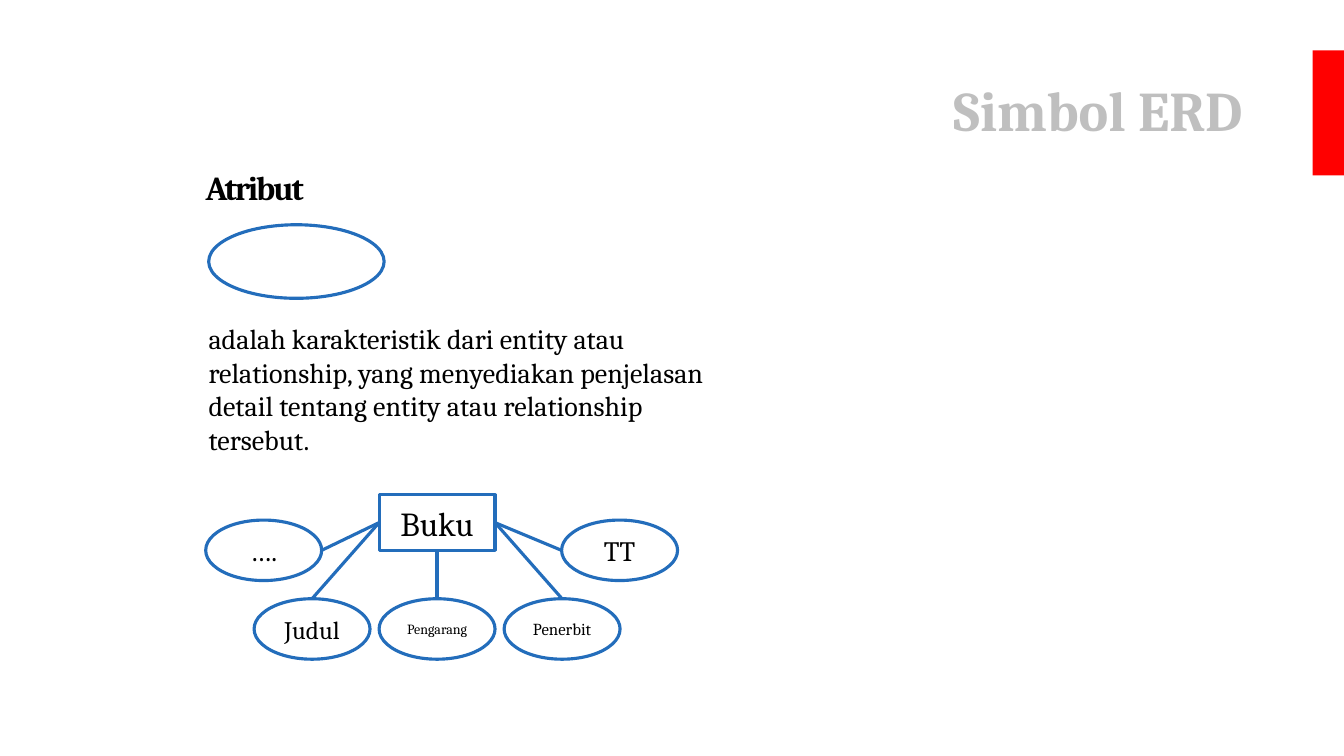
from dataclasses import dataclass

from lxml import etree
from pptx import Presentation
from pptx import util as u
from pptx.dml import color
from pptx.enum import shapes, text
from pptx.oxml import ns


@dataclass(frozen=True)
class Theme:
    font: str = "Cambria"
    ink: str = "000000"
    gray: str = "BFBFBF"
    red: str = "FF0000"
    blue: str = "236DBB"
    line: float = 2.25
    title: int = 40
    head: int = 24
    body: int = 20
    name: int = 18
    small: int = 12
    tiny: int = 10


T = Theme()
KIND = shapes.MSO_SHAPE
ALIGN = text.PP_ALIGN
MID = text.MSO_ANCHOR.MIDDLE
TOP, LEFT, DOWN, RIGHT = range(4)


def rgb(code):
    return color.RGBColor.from_string(code)


def write(shape, words, size=T.body, ink=T.ink, bold=False, align=ALIGN.LEFT,
          anchor=text.MSO_ANCHOR.TOP, wrap=True, space=None, lead=None):
    """Put formatted text into a shape."""
    frame = shape.text_frame
    frame.word_wrap = wrap
    frame.vertical_anchor = anchor
    para = frame.paragraphs[0]
    para.alignment = align
    para.line_spacing = lead
    run = para.add_run()
    run.text = words
    font = run.font
    font.name, font.size, font.bold = T.font, u.Pt(size), bold
    font.color.rgb = rgb(ink)
    if space is not None:
        run._r.get_or_add_rPr().set("spc", str(int(space * 100)))


def label(slide, box, words, **form):
    write(slide.shapes.add_textbox(*map(u.Inches, box)), words, **form)


def draw(slide, kind, box, fill=None, line=None):
    """Add a flat shape with an optional fill and outline."""
    shape = slide.shapes.add_shape(kind, *map(u.Inches, box))
    shape.shadow.inherit = False
    if fill:
        shape.fill.solid()
        shape.fill.fore_color.rgb = rgb(fill)
    else:
        shape.fill.background()
    if line:
        shape.line.color.rgb = rgb(line)
        shape.line.width = u.Pt(T.line)
    else:
        shape.line.fill.background()
    return shape


def link(slide, node, start, hub, side):
    """Run a line from a node to one side of the hub."""
    x, y = start
    line = slide.shapes.add_connector(shapes.MSO_CONNECTOR.STRAIGHT, x, y, x, y)
    if y == node.top:
        line.begin_connect(node, TOP)
    line.end_connect(hub, side)
    line.line.color.rgb = rgb(T.blue)
    line.line.width = u.Pt(T.line)
    etree.SubElement(line._element.spPr, ns.qn("a:effectLst"))


def header(slide, box):
    """Title at the right, with the red tab at the slide's edge."""
    x, y, w, h = box
    label(slide, box, "Simbol ERD", size=T.title, ink=T.gray, bold=True,
          align=ALIGN.RIGHT, anchor=MID, lead=0.9)
    draw(slide, KIND.RECTANGLE, (x + w + 0.6, y + 0.1, 0.64, 1.24), fill=T.red)


def notion(slide, box):
    """Heading, symbol and meaning."""
    x, y, w, h = box
    label(slide, (x, y, 3.52, 0.5), "Atribut", size=T.head, bold=True, space=-1.5)
    draw(slide, KIND.OVAL, (x + 0.13, y + 0.62, 1.74, 0.73), line=T.blue)
    label(slide, (x + 0.03, y + 1.53, w - 0.03, h - 1.53),
          "adalah karakteristik dari entity atau relationship, yang menyediakan "
          "penjelasan detail tentang entity atau relationship tersebut.")


def diagram(slide, box):
    """Entity in the middle, with its attributes around it."""
    x, y, w, h = box
    wide, tall, step = 1.15, 0.6, 1.24
    mid = x + 1.72
    low, side = y + h - tall, y + 0.25

    def node(kind, spot, words, size):
        shape = draw(slide, kind, spot, line=T.blue)
        write(shape, words, size=size, align=ALIGN.CENTER, anchor=MID, wrap=False)
        return shape

    hub = node(KIND.RECTANGLE, (mid, y, wide, 0.55), "Buku", T.head)
    # words, size, left, top, side of the hub, share of width where the line starts
    parts = [
        ("Judul", T.name, mid - step, low, LEFT, 0.5),
        ("Pengarang", T.tiny, mid, low, DOWN, 0.5),
        ("Penerbit", T.small, mid + step, low, RIGHT, 0.5),
        ("TT", T.body, x + w - wide, side, RIGHT, 0),
        ("….", T.body, x, side, LEFT, 1),
    ]
    for words, size, left, top, face, share in parts:
        oval = node(KIND.OVAL, (left, top, wide, tall), words, size)
        drop = 0 if top == low else oval.height // 2
        start = (oval.left + int(oval.width * share), oval.top + drop)
        link(slide, oval, start, hub, face)


def main():
    deck = Presentation()
    deck.slide_width, deck.slide_height = u.Inches(13.33), u.Inches(7.5)
    slide = deck.slides.add_slide(deck.slide_layouts[6])
    header(slide, (0.92, 0.4, 11.5, 1.45))
    notion(slide, (1.94, 1.61, 5.41, 2.98))
    diagram(slide, (2.04, 4.91, 4.68, 1.63))
    deck.save("out.pptx")


if __name__ == "__main__":
    main()
